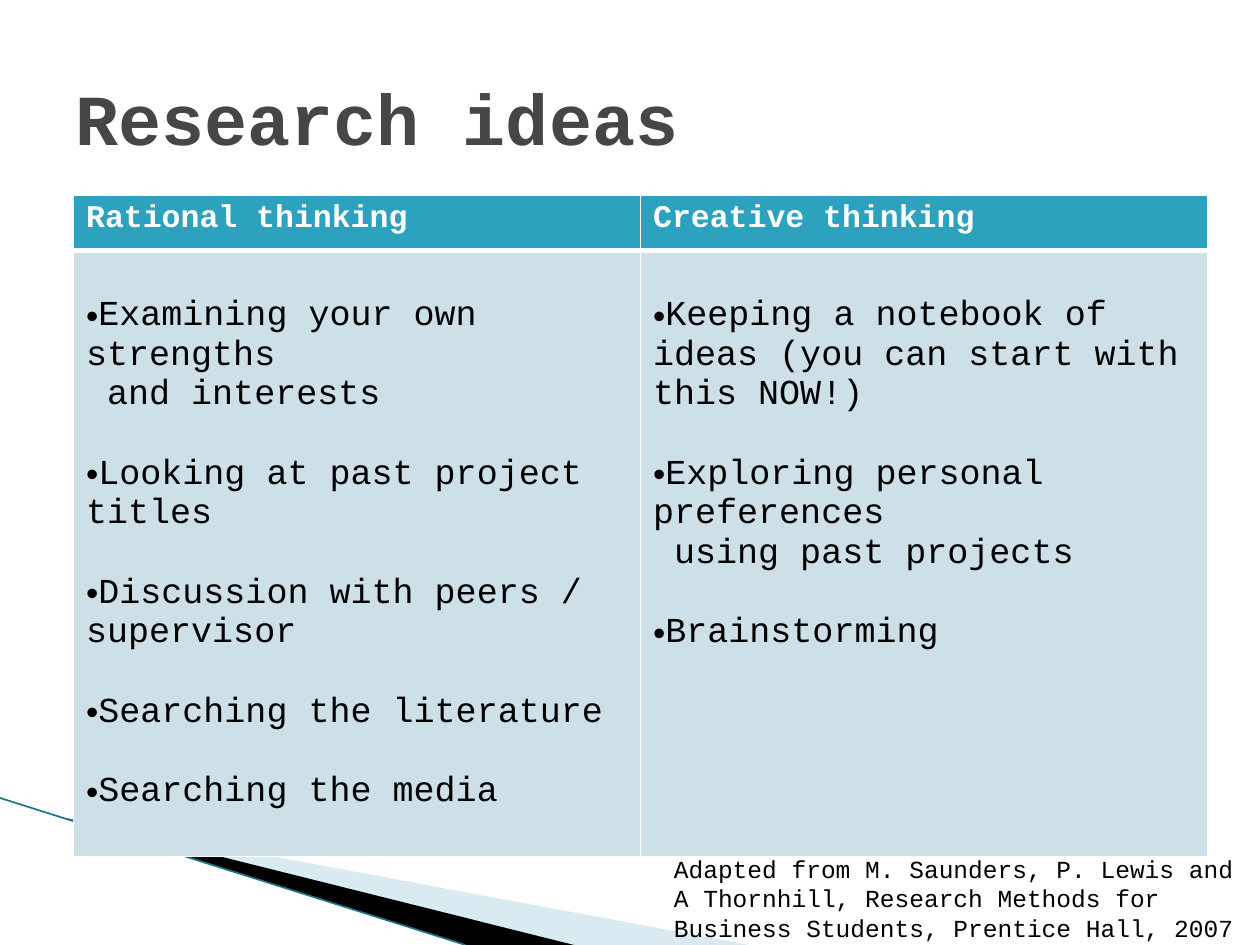
import pptx
import pptx.dml.color
import pptx.enum.shapes
import pptx.enum.text
import pptx.oxml.ns
import pptx.util
from lxml import etree

Pt = pptx.util.Pt
RGBColor = pptx.dml.color.RGBColor
ANCHOR = pptx.enum.text.MSO_ANCHOR
qn = pptx.oxml.ns.qn

WHITE = RGBColor(0xFF, 0xFF, 0xFF)
BLACK = RGBColor(0, 0, 0)
GREY = RGBColor(0x46, 0x46, 0x46)
TEAL = RGBColor(0x2D, 0xA2, 0xBF)
DARK_TEAL = RGBColor(0x1C, 0x74, 0x85)
PALE = RGBColor(0xCD, 0xE0, 0xE8)
LIGHT_BLUE = RGBColor(0xA0, 0xCB, 0xDC)
FONT = "Courier New"
LINE_GAP = 22.65  # one line of 20 pt text

COLUMNS = {
    "Rational thinking": [
        "Examining your own strengths\v and interests",
        "Looking at past project titles",
        "Discussion with peers / supervisor",
        "Searching the literature",
        "Searching the media",
    ],
    "Creative thinking": [
        "Keeping a notebook of ideas (you can start with this NOW!)",
        "Exploring personal preferences\v using past projects",
        "Brainstorming",
    ],
}


def write(p, text, size, color, bold=False):
    p.text = text
    for r in p.runs:
        for name, value in {"name": FONT, "size": Pt(size), "bold": bold}.items():
            setattr(r.font, name, value)
        r.font.color.rgb = color


def add_wedge(s, points, color, alpha=100):
    """Add a filled outline; alpha is its opacity in percent."""
    points = [(Pt(x), Pt(y)) for x, y in points]
    builder = s.shapes.build_freeform(*points[0])
    builder.add_line_segments(points[1:], close=True)
    sp = builder.convert_to_shape()
    sp.shadow.inherit = False
    sp.fill.solid()
    sp.fill.fore_color.rgb = color
    sp.line.fill.background()
    if alpha < 100:
        clr = sp.fill._xPr.find(qn("a:solidFill"))[0]
        etree.SubElement(clr, qn("a:alpha"), val=str(alpha * 1000))


def add_corner(s, left, top, width, height):
    """Draw the swoosh that runs from the left edge to the bottom edge."""
    bottom = top + height
    start = (left + 38, top + 11.5)
    add_wedge(s, [start, (left + width, bottom), (left + 328, bottom)], LIGHT_BLUE, 40)
    add_wedge(s, [start, (left + 328, bottom), (left + 266, bottom)], BLACK)
    line = s.shapes.add_connector(
        pptx.enum.shapes.MSO_CONNECTOR.STRAIGHT,
        Pt(left), Pt(top), Pt(left + 266), Pt(bottom))
    line.line.color.rgb = DARK_TEAL
    line.line.width = Pt(0.95)
    etree.SubElement(line._element.spPr, qn("a:effectLst"))


def add_title(s, left, top, width, height):
    title = s.shapes.title
    box = {"left": left, "top": top, "width": width, "height": height}
    for name, value in box.items():
        setattr(title, name, Pt(value))
    tf = title.text_frame
    tf.vertical_anchor = ANCHOR.MIDDLE
    p = tf.paragraphs[0]
    write(p, "Research ideas", 41, GREY, True)
    p.alignment = pptx.enum.text.PP_ALIGN.LEFT


def format_cell(cell, fill, bottom_width):
    tcPr = cell._tc.get_or_add_tcPr()
    widths = {"a:lnL": 1, "a:lnR": 1, "a:lnT": 1, "a:lnB": bottom_width}
    for tag, width in widths.items():
        ln = etree.SubElement(tcPr, qn(tag), w=str(Pt(width)))
        solid = etree.SubElement(ln, qn("a:solidFill"))
        etree.SubElement(solid, qn("a:srgbClr"), val=str(WHITE))
    cell.fill.solid()
    cell.fill.fore_color.rgb = fill


def add_bullets(cell, items):
    cell.margin_top = Pt(3.6 + LINE_GAP)
    tf = cell.text_frame
    for i, item in enumerate(items):
        p = tf.add_paragraph() if i else tf.paragraphs[0]
        if i:
            p.space_before = Pt(LINE_GAP)
        pPr = p._p.get_or_add_pPr()
        etree.SubElement(pPr, qn("a:buFont"), typeface="Arial")
        etree.SubElement(pPr, qn("a:buChar"), char="•")
        write(p, item, 20, BLACK)


def add_ideas_table(s, left, top, width, height, header_height=31.5):
    table = s.shapes.add_table(
        2, len(COLUMNS), Pt(left), Pt(top), Pt(width), Pt(height)).table
    table.rows[0].height = Pt(header_height)
    table.rows[1].height = Pt(height - header_height)
    for col, (heading, items) in enumerate(COLUMNS.items()):
        table.columns[col].width = Pt(width / len(COLUMNS))
        head, body = table.cell(0, col), table.cell(1, col)
        format_cell(head, TEAL, 3)
        write(head.text_frame.paragraphs[0], heading, 18, WHITE, True)
        format_cell(body, PALE, 1)
        add_bullets(body, items)


def add_citation(s, left, top, width, height):
    tf = s.shapes.add_textbox(Pt(left), Pt(top), Pt(width), Pt(height)).text_frame
    tf.word_wrap = True
    write(tf.paragraphs[0],
          "Adapted from M. Saunders, P. Lewis and A Thornhill, Research Methods "
          "for Business Students, Prentice Hall, 2007", 14, BLACK)


def main():
    prs = pptx.Presentation()
    prs.slide_width, prs.slide_height = Pt(720), Pt(540)
    s = prs.slides.add_slide(prs.slide_layouts[5])
    add_corner(s, 0, 456, 428, 84)
    add_title(s, 36, 21.6, 648, 90)
    add_ideas_table(s, 42, 111.6, 648, 378)
    add_citation(s, 378, 484.5, 342, 55.5)
    prs.save("out.pptx")


if __name__ == "__main__":
    main()
